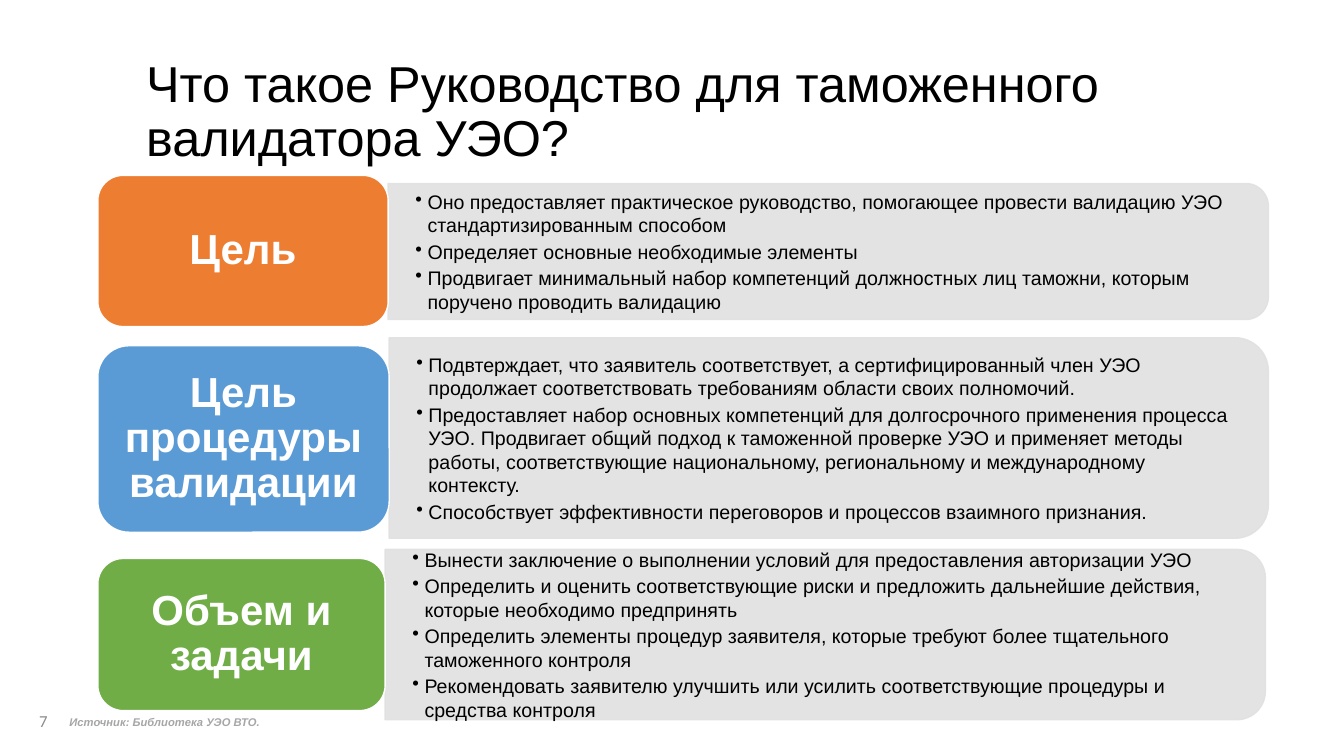
from lxml.etree import SubElement
from pptx import Presentation
from pptx.dml.color import RGBColor
from pptx.enum.shapes import MSO_SHAPE as Shape
from pptx.enum.text import MSO_ANCHOR as Anchor, PP_ALIGN as Align
from pptx.oxml.ns import qn
from pptx.util import Inches, Pt

BLACK = RGBColor(0x00, 0x00, 0x00)
WHITE = RGBColor(0xFF, 0xFF, 0xFF)
PANEL_GRAY = RGBColor(0xE1, 0xE1, 0xE1)
NUMBER_GRAY = RGBColor(0x8C, 0x8C, 0x8C)
SOURCE_GRAY = RGBColor(0xA6, 0xA6, 0xA6)
ORANGE = RGBColor(0xED, 0x7D, 0x31)
BLUE = RGBColor(0x5B, 0x9B, 0xD5)
GREEN = RGBColor(0x70, 0xAD, 0x47)

LABEL_LEFT = 0.97
BULLET_INDENT = 0.12

SECTIONS = [
    ("Цель", ORANGE, (1.74, 2.88, 1.5), (1.82, 8.73, 1.35), [
        "Оно предоставляет практическое руководство, помогающее провести валидацию УЭО стандартизированным способом",
        "Определяет основные необходимые элементы",
        "Продвигает минимальный набор компетенций должностных лиц таможни, которым поручено проводить валидацию",
    ]),
    ("Цель процедуры валидации", BLUE, (3.43, 2.89, 1.85), (3.35, 8.72, 1.99), [
        "Подвтерждает, что заявитель соответствует, а сертифицированный член УЭО продолжает соответствовать требованиям области своих полномочий.",
        "Предоставляет набор основных компетенций для долгосрочного применения процесса УЭО. Продвигает общий подход к таможенной проверке УЭО и применяет методы работы, соответствующие национальному, региональному и международному контексту.",
        "Способствует эффективности переговоров и процессов взаимного признания.",
    ]),
    ("Объем и задачи", GREEN, (5.54, 2.85, 1.51), (5.45, 8.73, 1.69), [
        "Вынести заключение о выполнении условий для предоставления авторизации УЭО",
        "Определить и оценить соответствующие риски и предложить дальнейшие действия, которые необходимо предпринять",
        "Определить элементы процедур заявителя, которые требуют более тщательного таможенного контроля",
        "Рекомендовать заявителю улучшить или усилить соответствующие процедуры и средства контроля",
    ]),
]


def write(holder, *lines, size, color, font="Arial", bold=False, italic=False,
          align=Align.LEFT, spacing=None, after=0, inset=(0.1, 0.05), bullets=False):
    frame = holder.text_frame
    frame.word_wrap = True
    frame.vertical_anchor = Anchor.MIDDLE
    frame.margin_left = frame.margin_right = Inches(inset[0])
    frame.margin_top = frame.margin_bottom = Inches(inset[1])
    for index, line in enumerate(lines):
        paragraph = frame.add_paragraph() if index else frame.paragraphs[0]
        paragraph.alignment = align
        paragraph.space_after = Pt(after)
        if spacing:
            paragraph.line_spacing = spacing
        if bullets:
            paragraph.level = 1
            properties = paragraph._p.get_or_add_pPr()
            properties.set("marL", str(Inches(BULLET_INDENT)))
            properties.set("indent", str(-Inches(BULLET_INDENT)))
            SubElement(properties, qn("a:buChar"), char="•")
        run = paragraph.add_run()
        run.text = line
        run.font.name = font
        run.font.size = Pt(size)
        run.font.bold = bold
        run.font.italic = italic
        run.font.color.rgb = color


def add_text(slide, box, *lines, **style):
    write(slide.shapes.add_textbox(*map(Inches, box)), *lines, **style)


def add_block(slide, kind, box, fill, outline):
    block = slide.shapes.add_shape(kind, *map(Inches, box))
    block.shadow.inherit = False
    block.fill.solid()
    block.fill.fore_color.rgb = fill
    block.line.color.rgb = outline
    block.line.width = Pt(1)
    return block


def add_panel(slide, box, points):
    left, top, width, height = box
    shift = (width - height) / 2
    panel = add_block(slide, Shape.ROUND_2_SAME_RECTANGLE,
                      (left + shift, top - shift, height, width), PANEL_GRAY, PANEL_GRAY)
    panel.rotation = 90
    for tint in panel._element.spPr.iter(qn("a:srgbClr")):
        SubElement(tint, qn("a:alpha"), val="90000")
    add_text(slide, (left, top + 0.08, width - 0.08, height - 0.16), *points,
             size=14, color=BLACK, after=2.1, inset=(0.27, 0.14), bullets=True)


def add_section(slide, label, color, label_box, panel_box, points):
    label_top, label_width, label_height = label_box
    panel_top, panel_width, panel_height = panel_box
    add_panel(slide, (LABEL_LEFT + label_width, panel_top, panel_width, panel_height), points)
    heading = add_block(slide, Shape.ROUNDED_RECTANGLE,
                        (LABEL_LEFT, label_top, label_width, label_height), color, WHITE)
    write(heading, label, size=30, color=WHITE, bold=True, align=Align.CENTER,
          spacing=0.9, inset=(0.12, 0.06))


def add_footer(slide):
    add_text(slide, (0.07, 6.95, 0.5, 0.4), "7", size=12, color=NUMBER_GRAY,
             font="Calibri", align=Align.RIGHT)
    add_text(slide, (0.59, 7.04, 2.16, 0.24), "Источник: Библиотека УЭО ВТО.", size=8,
             color=SOURCE_GRAY, bold=True, italic=True, after=6)


def main():
    deck = Presentation()
    deck.slide_width, deck.slide_height = Inches(13.33), Inches(7.5)
    slide = deck.slides.add_slide(deck.slide_layouts[6])
    add_text(slide, (1.35, 0.4, 9.81, 1.45),
             "Что такое Руководство для таможенного валидатора УЭО?",
             size=36, color=BLACK, spacing=0.9)
    add_footer(slide)
    for section in SECTIONS:
        add_section(slide, *section)
    deck.save("out.pptx")


if __name__ == "__main__":
    main()
